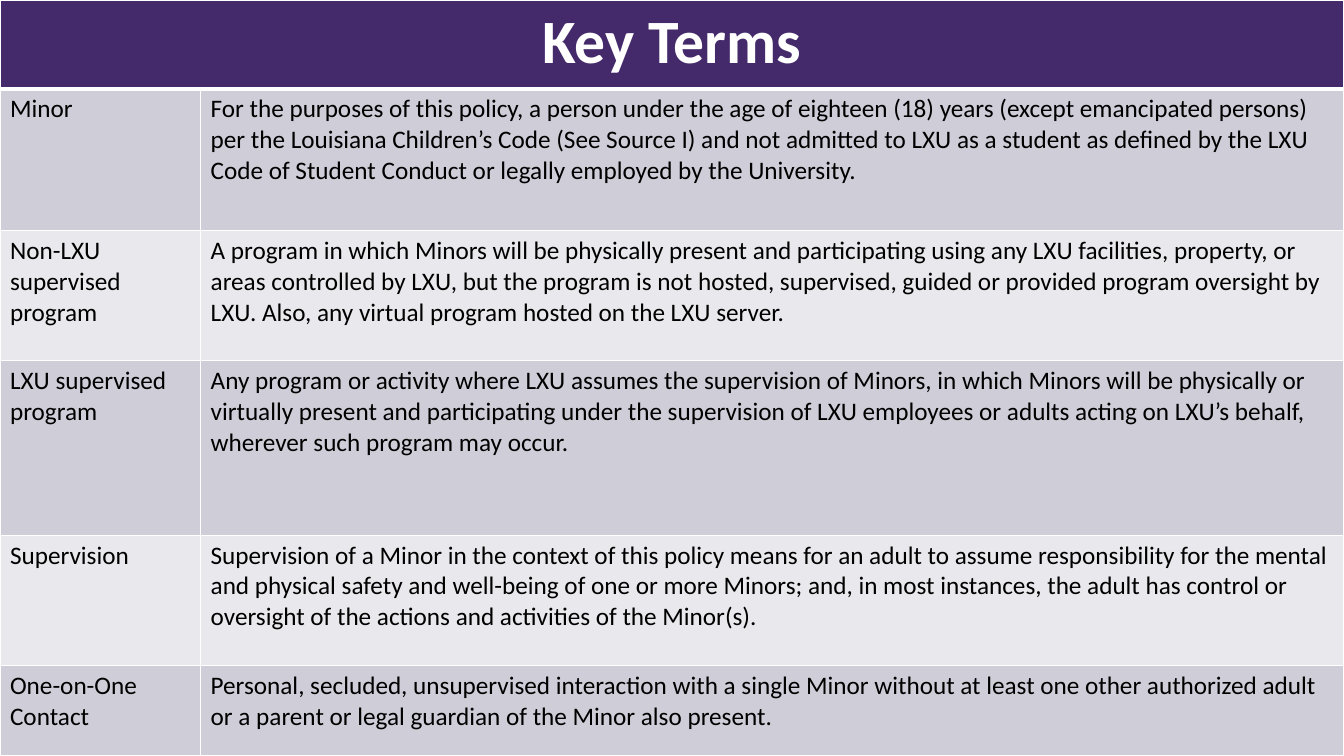
from lxml import etree
from pptx import Presentation
from pptx.dml.color import RGBColor
from pptx.enum.text import PP_ALIGN as Align
from pptx.oxml.ns import qn
from pptx.util import Pt

PX = 9144
WIDE, HIGH = 1333, 750
COLS = [199, 1134]
ROWS = [88, 141, 129, 173, 129, 90]
PURPLE, WHITE, BLACK = "442A6A", "FFFFFF", "000000"
BANDS = ["CFCDD7", "E9E8EC"]
TITLE = "Key Terms"
TERMS = [
    ("Minor",
     "For the purposes of this policy, a person under the age of eighteen (18) years "
     "(except emancipated persons) per the Louisiana Children’s Code (See Source I) and "
     "not admitted to LXU as a student as defined by the LXU Code of Student Conduct or "
     "legally employed by the University."),
    ("Non-LXU supervised program",
     "A program in which Minors will be physically present and participating using any "
     "LXU facilities, property, or areas controlled by LXU, but the program is not hosted, "
     "supervised, guided or provided program oversight by LXU. Also, any virtual program "
     "hosted on the LXU server."),
    ("LXU supervised program",
     "Any program or activity where LXU assumes the supervision of Minors, in which Minors "
     "will be physically or virtually present and participating under the supervision of "
     "LXU employees or adults acting on LXU’s behalf, wherever such program may occur."),
    ("Supervision",
     "Supervision of a Minor in the context of this policy means for an adult to assume "
     "responsibility for the mental and physical safety and well-being of one or more "
     "Minors; and, in most instances, the adult has control or oversight of the actions "
     "and activities of the Minor(s)."),
    ("One-on-One Contact",
     "Personal, secluded, unsupervised interaction with a single Minor without at least "
     "one other authorized adult or a parent or legal guardian of the Minor also present."),
]


def color(code):
    return RGBColor.from_string(code)


def edge(cell, top=1, bottom=1):
    """Draw white borders, with widths in points."""
    props = cell._tc.get_or_add_tcPr()
    for tag, width in (("lnL", 1), ("lnR", 1), ("lnT", top), ("lnB", bottom)):
        line = etree.SubElement(props, qn(f"a:{tag}"), w=str(Pt(width)))
        fill = etree.SubElement(line, qn("a:solidFill"))
        etree.SubElement(fill, qn("a:srgbClr"), val=WHITE)


def paint(cell, code):
    cell.fill.solid()
    cell.fill.fore_color.rgb = color(code)


def write(cell, text, size, code, bold=False):
    cell.text_frame.text = text
    font = cell.text_frame.paragraphs[0].runs[0].font
    font.name, font.size, font.bold = "Calibri", Pt(size), bold
    font.color.rgb = color(code)


def add_head(table):
    for cell in table.rows[0].cells:
        edge(cell, bottom=3)
        paint(cell, PURPLE)
    first = table.cell(0, 0)
    first.merge(table.cell(0, 1))
    write(first, TITLE, 44, WHITE, bold=True)
    first.text_frame.paragraphs[0].alignment = Align.CENTER


def add_terms(table):
    for row, pair in enumerate(TERMS, 1):
        for col, text in enumerate(pair):
            cell = table.cell(row, col)
            edge(cell, top=3 if row == 1 else 1)
            paint(cell, BANDS[(row - 1) % 2])
            write(cell, text, 18, BLACK)


def add_grid(slide, left, top, width, height):
    box = [n * PX for n in (left, top, width, height)]
    table = slide.shapes.add_table(len(ROWS), len(COLS), *box).table
    table.horz_banding = False
    for col, size in zip(table.columns, COLS):
        col.width = size * PX
    for row, size in zip(table.rows, ROWS):
        row.height = size * PX
    add_head(table)
    add_terms(table)


def main():
    deck = Presentation()
    deck.slide_width, deck.slide_height = WIDE * PX, HIGH * PX
    slide = deck.slides.add_slide(deck.slide_layouts[6])
    back = slide.background.fill
    back.solid()
    back.fore_color.rgb = color(PURPLE)
    add_grid(slide, 0, 0, WIDE, HIGH)
    deck.save("out.pptx")


if __name__ == "__main__":
    main()
